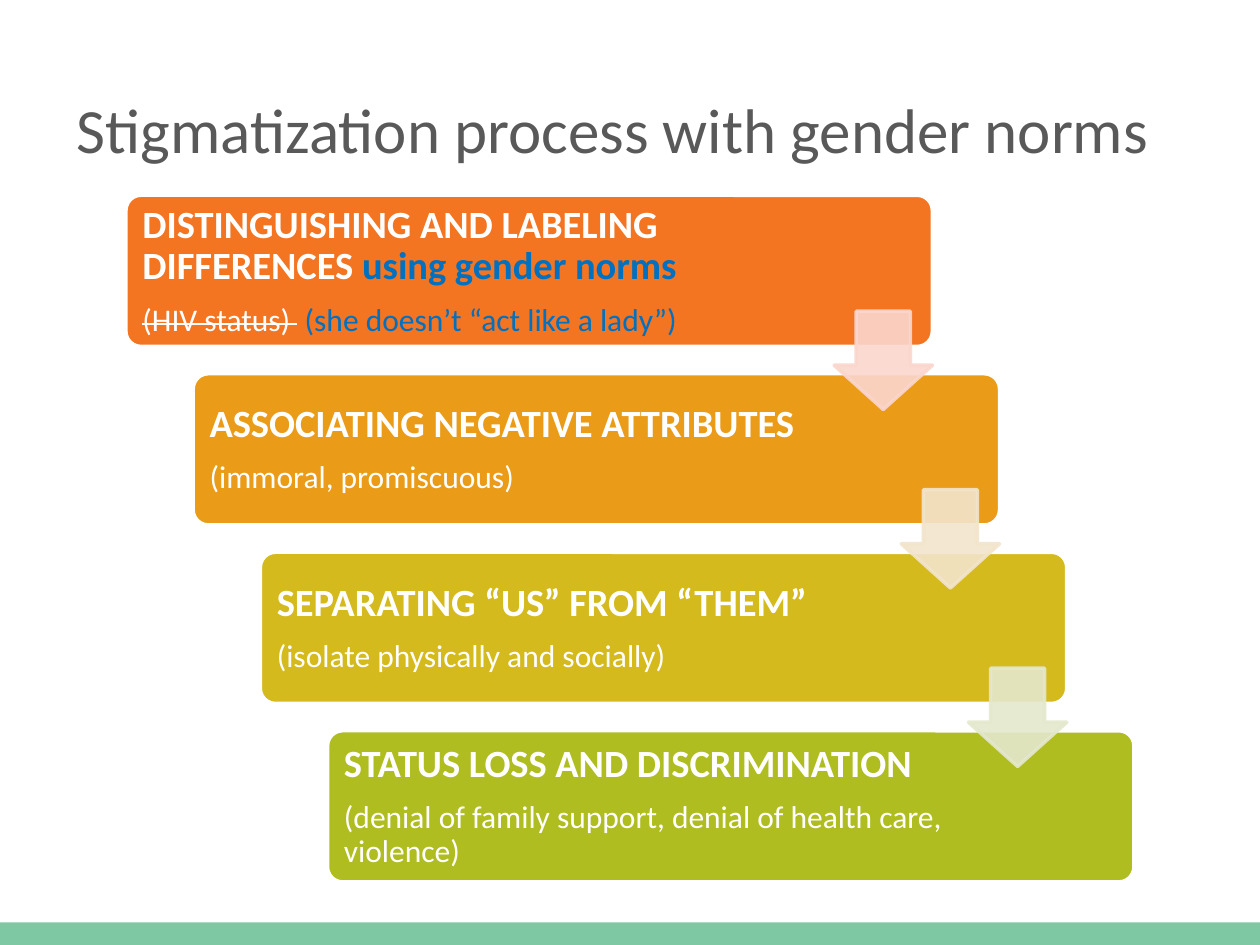
from dataclasses import dataclass

from lxml import etree
from pptx import Presentation
from pptx import util as u
from pptx.dml.color import RGBColor
from pptx.enum import shapes, text
from pptx.oxml.ns import qn


@dataclass(frozen=True)
class Theme:
    font: str = "Calibri"
    title_size: int = 36
    heading_size: int = 22
    detail_size: int = 18
    title_color: str = "595959"
    light: str = "FFFFFF"
    accent: str = "0070C0"
    footer: str = "7EC9A3"
    steps: tuple = ("F37421", "EA9C18", "D4BA1C", "AFBD21")
    arrows: tuple = ("FAD6CD", "F2E5CC", "E4E8CD")


@dataclass(frozen=True)
class Span:
    words: str
    accent: bool = False
    strike: bool = False


STEPS = [
    ([Span("DISTINGUISHING AND LABELING DIFFERENCES "), Span("using gender norms", accent=True)],
     [Span("(HIV status) ", strike=True), Span(" "),
      Span("(she doesn’t “act like a lady”)", accent=True)]),
    ([Span("ASSOCIATING NEGATIVE ATTRIBUTES")], [Span("(immoral, promiscuous)")]),
    ([Span("SEPARATING “US” FROM “THEM”")], [Span("(isolate physically and socially)")]),
    ([Span("STATUS LOSS AND DISCRIMINATION")],
     [Span("(denial of family support, denial of health care, violence)")]),
]


class SlideBuilder:
    def __init__(self, page, theme):
        self.page = page
        self.theme = theme

    def style(self, run, size, color, bold=False):
        run.font.name = self.theme.font
        run.font.size = u.Pt(size)
        run.font.bold = bold
        run.font.color.rgb = RGBColor.from_string(color)

    def title(self, words, *bounds):
        box = self.page.shapes.title
        box.left, box.top, box.width, box.height = map(u.Inches, bounds)
        frame = box.text_frame
        frame.text = words
        frame.word_wrap = True
        frame.vertical_anchor = text.MSO_ANCHOR.MIDDLE
        para = frame.paragraphs[0]
        para.alignment = text.PP_ALIGN.LEFT
        self.style(para.runs[0], self.theme.title_size, self.theme.title_color)

    def shape(self, kind, bounds, fill, line=None, adjust=(), opacity=100):
        """Draw a preset shape; opacity is a percentage for both fill and line."""
        shape = self.page.shapes.add_shape(kind, *map(u.Inches, bounds))
        shape.shadow.inherit = False
        for index, value in enumerate(adjust):
            shape.adjustments[index] = value
        shape.fill.solid()
        shape.fill.fore_color.rgb = RGBColor.from_string(fill)
        if line:
            shape.line.color.rgb = RGBColor.from_string(line)
            shape.line.width = u.Pt(2)
        else:
            shape.line.fill.background()
        if opacity < 100:
            for color in shape._element.spPr.iter(qn("a:srgbClr")):
                etree.SubElement(color, qn("a:alpha")).set("val", str(opacity * 1000))

    def label(self, heading, detail, *bounds):
        frame = self.page.shapes.add_textbox(*map(u.Inches, bounds)).text_frame
        frame.word_wrap = True
        frame.vertical_anchor = text.MSO_ANCHOR.MIDDLE
        frame.margin_left = frame.margin_right = u.Inches(0.09)
        frame.margin_top = frame.margin_bottom = u.Inches(0.09)
        self.fill_paragraph(frame.paragraphs[0], heading, self.theme.heading_size, True)
        self.fill_paragraph(frame.add_paragraph(), detail, self.theme.detail_size, False)

    def fill_paragraph(self, para, spans, size, bold):
        para.line_spacing = 0.9
        para.space_after = u.Pt(9)
        for span in spans:
            run = para.add_run()
            run.text = span.words
            self.style(run, size, self.theme.accent if span.accent else self.theme.light, bold)
            if span.strike:
                run.font._element.set("strike", "sngStrike")


def main():
    deck = Presentation()
    deck.slide_width, deck.slide_height = u.Inches(10), u.Inches(7.5)
    theme = Theme()
    builder = SlideBuilder(deck.slides.add_slide(deck.slide_layouts[5]), theme)
    kinds = shapes.MSO_SHAPE

    builder.shape(kinds.RECTANGLE, (0, 7.32, 10, 0.18), theme.footer)
    builder.title("Stigmatization process with gender norms", 0.51, 0.49, 8.99, 1.06)

    gaps = len(STEPS) - 1
    corners = [(1 + 1.6 * i / gaps, 1.55 + 4.25 * i / gaps) for i in range(len(STEPS))]
    for (left, top), color, (heading, detail) in zip(corners, theme.steps, STEPS):
        builder.shape(kinds.ROUNDED_RECTANGLE, (left, top, 6.4, 1.2), color, theme.light, [0.1])
        builder.label(heading, detail, left + 0.04, top + 0.04, 5, 1.13)
    for (left, top), color in zip(corners, theme.arrows):
        builder.shape(kinds.DOWN_ARROW, (left + 5.62, top + 0.92, 0.78, 0.78),
                      color, color, [0.55, 0.45], opacity=90)

    deck.save("out.pptx")


if __name__ == "__main__":
    main()
